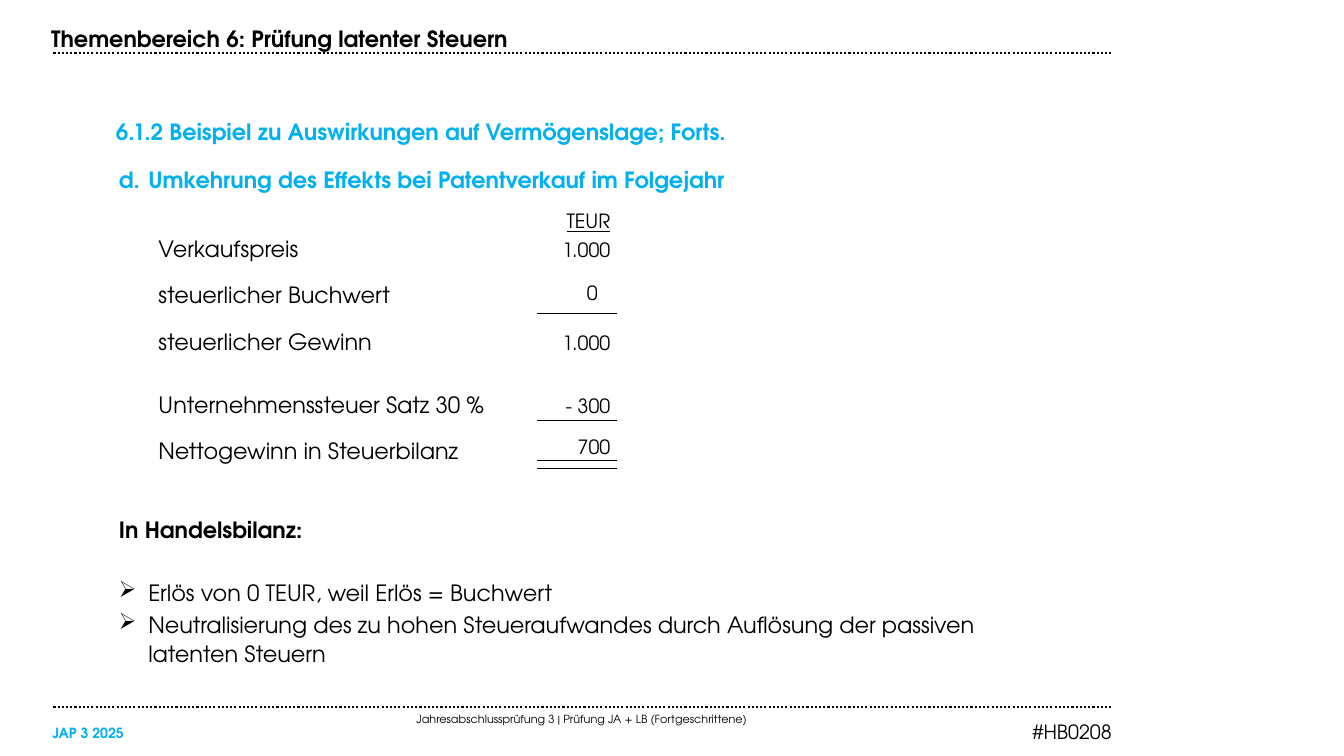
from lxml.etree import SubElement
from pptx import Presentation
from pptx.dml.color import RGBColor
from pptx.enum.dml import MSO_LINE
from pptx.enum.shapes import MSO_CONNECTOR
from pptx.enum.text import MSO_ANCHOR, PP_ALIGN
from pptx.oxml.ns import qn
from pptx.util import Pt

BLACK = RGBColor(0x00, 0x00, 0x00)
CYAN = RGBColor(0x00, 0xB0, 0xF0)
FONT_NAME = "TeX Gyre Adventor"
HANGING = 21
ROW_INDENT = 28.3
LETTER_D = ("a:buAutoNum", {"type": "alphaLcPeriod", "startAt": "4"})
ARROW = ("a:buChar", {"char": "➢"})

HEADING = {"size": Pt(16), "bold": True, "color": CYAN}
STRONG = {"size": Pt(16), "bold": True}
BODY = {"size": Pt(16)}
FIGURE = {"size": Pt(14)}


def set_attributes(target, values):
    for name, value in values.items():
        setattr(target, name, value)


def format_font(font, style):
    values = {"name": FONT_NAME, "color": BLACK, **style}
    font.color.rgb = values.pop("color")
    set_attributes(font, values)


def fill_paragraph(paragraph, text, style, layout):
    paragraph.text = text
    set_attributes(paragraph, layout)
    for run in paragraph.runs:
        format_font(run.font, style)
    for line_break in paragraph._p.findall(qn("a:br")):
        size = str(int(style["size"].pt * 100))
        properties = SubElement(line_break, qn("a:rPr"), {"sz": size})
        SubElement(properties, qn("a:latin"), {"typeface": FONT_NAME})


def indent(paragraph, left, bullet):
    properties = paragraph._p.get_or_add_pPr()
    properties.set("marL", str(Pt(left)))
    properties.set("indent", str(-Pt(left) if bullet else 0))
    if bullet:
        tag, values = bullet
        SubElement(properties, qn(tag), values)


def add_frame(slide, left, top, width, height, **frame_values):
    shape = slide.shapes.add_textbox(Pt(left), Pt(top), Pt(width), Pt(height))
    set_attributes(shape.text_frame, {"word_wrap": True, **frame_values})
    return shape.text_frame


def add_label(slide, text, box, style, align=PP_ALIGN.LEFT, **frame_values):
    frame = add_frame(slide, *box, **frame_values)
    fill_paragraph(frame.paragraphs[0], text, style, {"alignment": align})


def add_flush_label(slide, text, box, style, align=PP_ALIGN.LEFT, anchor=MSO_ANCHOR.MIDDLE):
    margins = {f"margin_{side}": 0 for side in ("left", "right", "top", "bottom")}
    add_label(slide, text, box, style, align, vertical_anchor=anchor, **margins)


def add_rule(slide, left, right, top, **line_values):
    connector = slide.shapes.add_connector(
        MSO_CONNECTOR.STRAIGHT, Pt(left), Pt(top), Pt(right), Pt(top)
    )
    connector.line.color.rgb = BLACK
    set_attributes(connector.line, line_values)
    SubElement(connector._element.spPr, qn("a:effectLst"))


def add_body(slide):
    entries = [
        ("Umkehrung des Effekts bei Patentverkauf im Folgejahr", HEADING, HANGING, LETTER_D, 0, 0),
        ("Verkaufspreis", BODY, ROW_INDENT, None, 28.5, 6),
        ("steuerlicher Buchwert", BODY, ROW_INDENT, None, 6, 6),
        ("steuerlicher Gewinn", BODY, ROW_INDENT, None, 6, 6),
        ("Unternehmenssteuer Satz 30 %", BODY, ROW_INDENT, None, 18, 6),
        ("Nettogewinn in Steuerbilanz", BODY, ROW_INDENT, None, 6, 6),
        ("In Handelsbilanz:", STRONG, 0, None, 29, 0),
        ("Erlös von 0 TEUR, weil Erlös = Buchwert", BODY, HANGING, ARROW, 24, 0),
        (
            "Neutralisierung des zu hohen Steueraufwandes durch Auflösung der passiven"
            "\vlatenten Steuern",
            BODY, HANGING, ARROW, 1.6, 0,
        ),
    ]
    frame = add_frame(slide, 77.8, 113, 850.3, 385.2)
    for index, (text, style, left, bullet, before, after) in enumerate(entries):
        paragraph = frame.add_paragraph() if index else frame.paragraphs[0]
        layout = {"line_spacing": 1.1, "space_before": Pt(before), "space_after": Pt(after)}
        fill_paragraph(paragraph, text, style, layout)
        indent(paragraph, left, bullet)


def add_figures(slide):
    figures = [
        ("TEUR", 443, 145.4, {**FIGURE, "underline": True}),
        ("1.000", 443, 166.3, FIGURE),
        ("0", 434, 197.3, FIGURE),
        ("1.000", 443, 232.6, FIGURE),
        ("- 300", 443, 277.9, FIGURE),
        ("700", 443, 307.4, FIGURE),
    ]
    width = 60
    for text, right, top, style in figures:
        add_label(slide, text, (right - width, top, width, 24.5), style, PP_ALIGN.RIGHT)
    for top in (224, 300.2, 329, 334.8):
        add_rule(slide, 383.8, 440.6, top, width=Pt(1))


def add_header_and_footer(slide):
    for top in (37.8, 504.7):
        add_rule(slide, 38.2, 794.9, top, width=Pt(1.5), dash_style=MSO_LINE.ROUND_DOT)
    add_label(slide, "Themenbereich 6: Prüfung latenter Steuern", (29.5, 14.4, 788.4, 26.6), STRONG)
    add_flush_label(
        slide, "Jahresabschlussprüfung 3 | Prüfung JA + LB (Fortgeschrittene)",
        (37.4, 509, 756.7, 9.4), {"size": Pt(8)}, PP_ALIGN.CENTER,
    )
    add_flush_label(
        slide, "#HB0208", (686.2, 514.1, 108, 21.6), FIGURE, PP_ALIGN.RIGHT, MSO_ANCHOR.TOP
    )
    add_flush_label(slide, "JAP 3 2025", (37.4, 514.1, 75.6, 19.4), {**HEADING, "size": Pt(10)})


def main():
    presentation = Presentation()
    set_attributes(presentation, {"slide_width": Pt(960), "slide_height": Pt(540)})
    slide = presentation.slides.add_slide(presentation.slide_layouts[6])
    add_header_and_footer(slide)
    add_flush_label(
        slide, "6.1.2 Beispiel zu Auswirkungen auf Vermögenslage; Forts.",
        (82.8, 81.4, 850.3, 25.2), HEADING,
    )
    add_body(slide)
    add_figures(slide)
    presentation.save("out.pptx")


if __name__ == "__main__":
    main()
